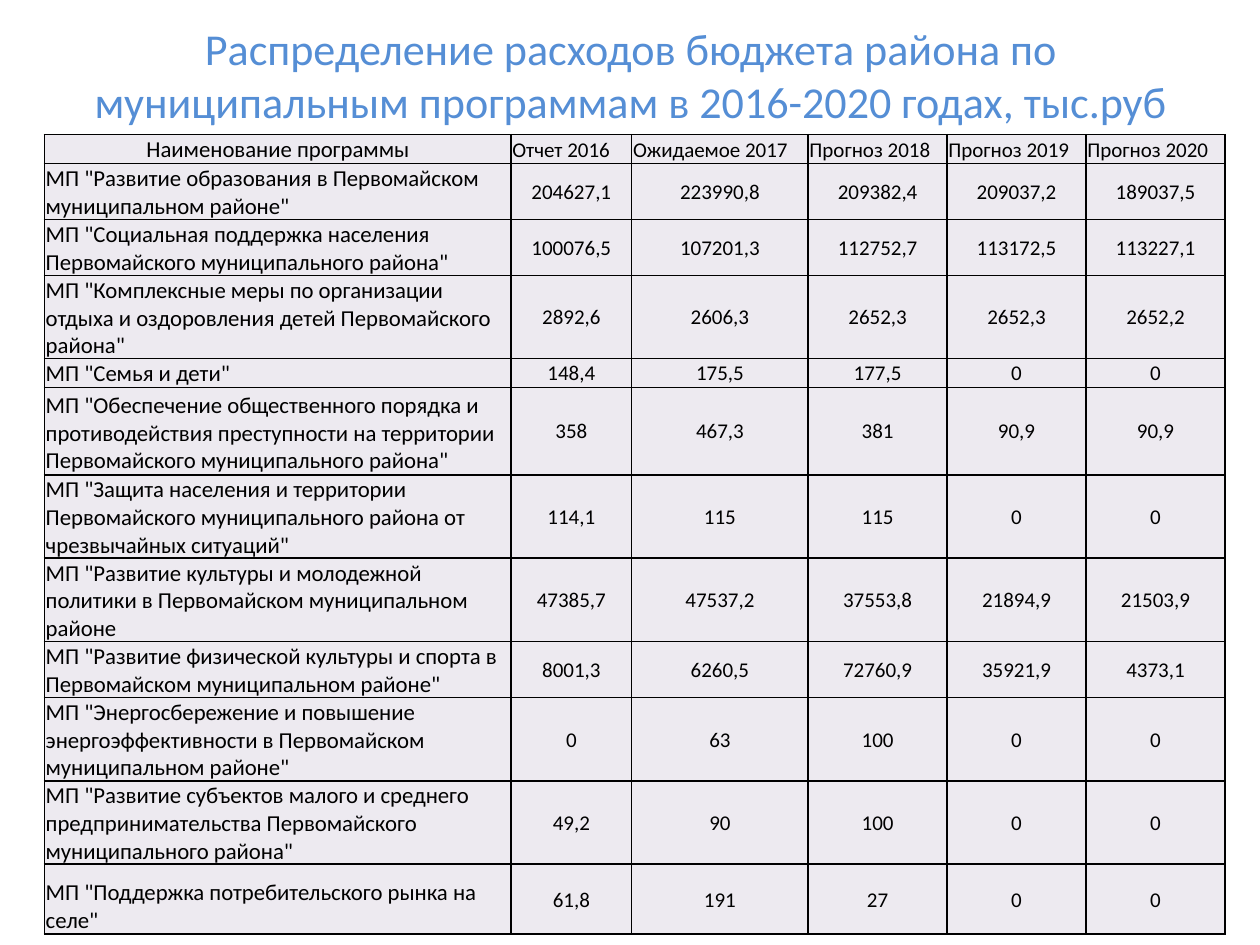
"""Build a slide with a table of district budget spending by municipal programme."""
from lxml import etree
from pptx import Presentation
from pptx.dml.color import RGBColor
from pptx.enum.text import MSO_ANCHOR, PP_ALIGN
from pptx.oxml.ns import qn
from pptx.util import Pt

LEFT, CENTER = PP_ALIGN.LEFT, PP_ALIGN.CENTER
MIDDLE, BOTTOM = MSO_ANCHOR.MIDDLE, MSO_ANCHOR.BOTTOM
FONT = "Calibri"
COLORS = {"title": "558ED5", "text": "000000", "border": "000000", "cell": "EDEAF0"}
TITLE = "Распределение расходов бюджета района по муниципальным программам в 2016-2020 годах, тыс.руб"
HEADER = ["Наименование программы", "Отчет 2016", "Ожидаемое 2017",
          "Прогноз 2018", "Прогноз 2019", "Прогноз 2020"]
PROGRAMS = [
    (31, 'МП "Развитие образования в Первомайском муниципальном районе"',
     "204627,1 223990,8 209382,4 209037,2 189037,5"),
    (31, 'МП "Социальная поддержка населения Первомайского муниципального района"',
     "100076,5 107201,3 112752,7 113172,5 113227,1"),
    (46, 'МП "Комплексные меры по организации отдыха и оздоровления детей Первомайского района"',
     "2892,6 2606,3 2652,3 2652,3 2652,2"),
    (16, 'МП "Семья и дети"', "148,4 175,5 177,5 0 0"),
    (50, 'МП "Обеспечение общественного порядка и противодействия преступности '
         'на территории Первомайского муниципального района"', "358 467,3 381 90,9 90,9"),
    (46, 'МП "Защита населения и территории Первомайского муниципального района '
         'от чрезвычайных ситуаций"', "114,1 115 115 0 0"),
    (46, 'МП "Развитие культуры и молодежной политики в Первомайском муниципальном районе',
     "47385,7 47537,2 37553,8 21894,9 21503,9"),
    (31, 'МП "Развитие физической культуры и спорта в Первомайском муниципальном районе"',
     "8001,3 6260,5 72760,9 35921,9 4373,1"),
    (46, 'МП "Энергосбережение и повышение энергоэффективности в Первомайском муниципальном районе"',
     "0 63 100 0 0"),
    (46, 'МП "Развитие субъектов малого и среднего предпринимательства '
         'Первомайского муниципального района"', "49,2 90 100 0 0"),
    (40, 'МП "Поддержка потребительского рынка на селе"', "61,8 191 27 0 0"),
]
WIDTHS = [266.6, 69, 100.8, 79.4, 79.4, 79.4]
CELL_FORMAT = {"margin_left": Pt(0.75), "margin_right": Pt(0.75),
               "margin_top": Pt(0.75), "margin_bottom": 0}
TITLE_FORMAT = {"word_wrap": True, "vertical_anchor": MIDDLE}


def write(p, text, size, color, align):
    p.alignment = align
    r = p.add_run()
    r.text = text
    for name, value in {"name": FONT, "size": Pt(size)}.items():
        setattr(r.font, name, value)
    r.font.color.rgb = RGBColor.from_string(COLORS[color])
    return r


def line(parent, tag, index, width, color):
    ln = etree.Element(qn(tag), w=str(Pt(width)))
    fill = etree.SubElement(ln, qn("a:solidFill"))
    etree.SubElement(fill, qn("a:srgbClr"), val=COLORS[color])
    parent.insert(index, ln)


prs = Presentation()
prs.slide_width, prs.slide_height = Pt(720), Pt(540)
s = prs.slides.add_slide(prs.slide_layouts[6])

sp = s.shapes.add_textbox(Pt(36.5), Pt(15), Pt(648), Pt(55.5))
tf = sp.text_frame
for name, value in TITLE_FORMAT.items():
    setattr(tf, name, value)
r = write(tf.paragraphs[0], TITLE, 25.2, "title", CENTER)
line(r.font._element, "a:ln", 0, 0.75, "title")

heights = [16] + [height for height, _, _ in PROGRAMS]
rows = [HEADER] + [[name] + values.split() for _, name, values in PROGRAMS]
sp = s.shapes.add_table(len(rows), len(WIDTHS), Pt(25.4), Pt(77),
                        Pt(sum(WIDTHS)), Pt(sum(heights)))
table = sp.table
for column, width in zip(table.columns, WIDTHS):
    column.width = Pt(width)
for row, height in zip(table.rows, heights):
    row.height = Pt(height)

for i, row in enumerate(rows):
    for j, text in enumerate(row):
        cell = table.cell(i, j)
        for name, value in CELL_FORMAT.items():
            setattr(cell, name, value)
        cell.vertical_anchor = BOTTOM if i == 0 or j == 0 else MIDDLE
        cell.fill.solid()
        cell.fill.fore_color.rgb = RGBColor.from_string(COLORS["cell"])
        align = CENTER if (i == 0) == (j == 0) else LEFT
        write(cell.text_frame.paragraphs[0], text, 13 if j == 0 else 12, "text", align)
        for index, tag in enumerate(["a:lnL", "a:lnR", "a:lnT", "a:lnB"]):
            line(cell._tc.get_or_add_tcPr(), tag, index, 1, "border")

prs.save("out.pptx")
